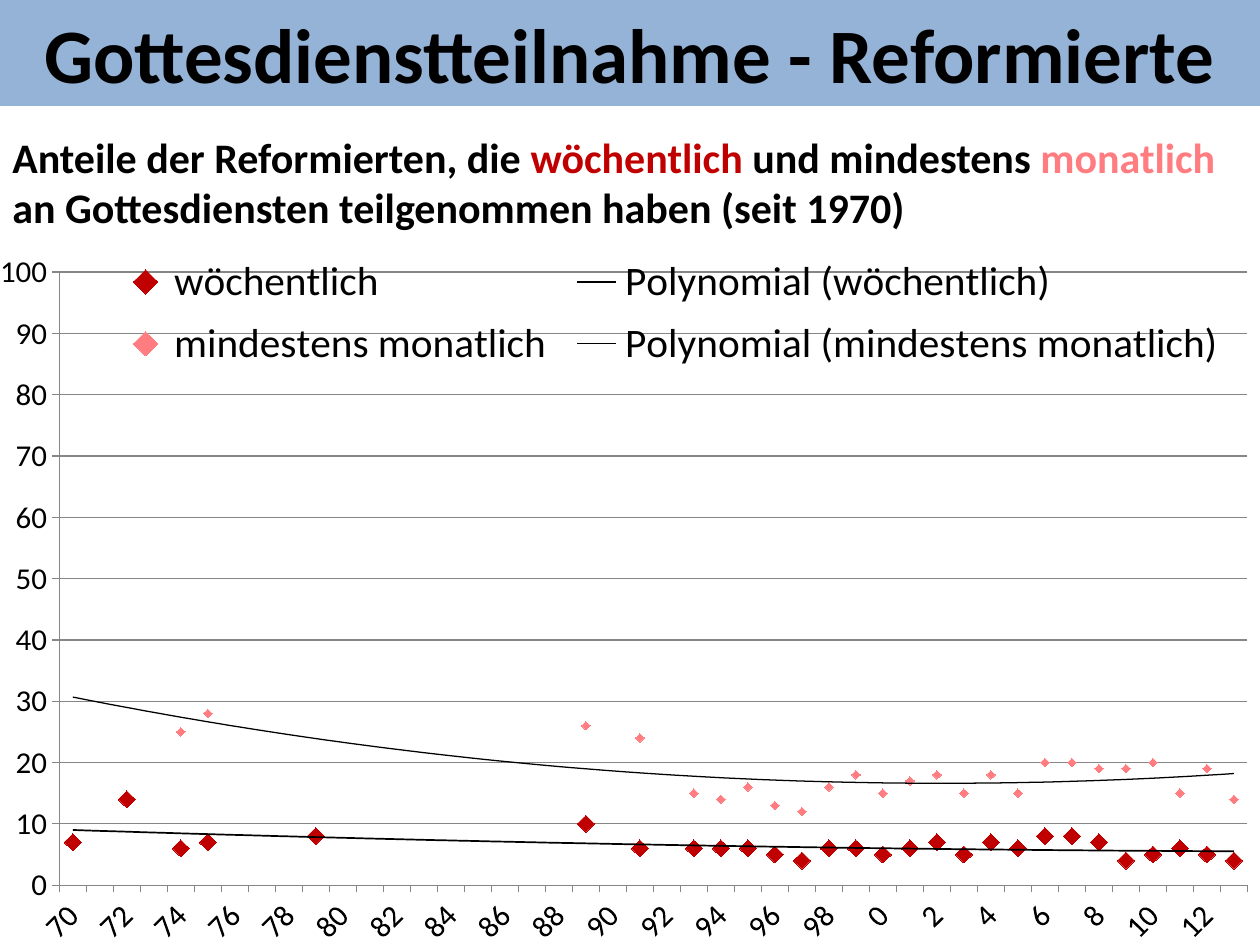
from lxml import etree
from pptx import Presentation
from pptx.chart.data import CategoryChartData
from pptx.dml.color import RGBColor
from pptx.enum.chart import XL_CHART_TYPE, XL_LEGEND_POSITION, XL_MARKER_STYLE, XL_TICK_MARK
from pptx.enum.text import MSO_ANCHOR, MSO_AUTO_SIZE, PP_ALIGN
from pptx.oxml import parse_xml
from pptx.oxml.ns import nsdecls, qn
from pptx.util import Pt

LINE_MARKERS = XL_CHART_TYPE.LINE_MARKERS
DIAMOND = XL_MARKER_STYLE.DIAMOND
RIGHT = XL_LEGEND_POSITION.RIGHT
OUTSIDE, NO_TICK = XL_TICK_MARK.OUTSIDE, XL_TICK_MARK.NONE
MIDDLE, CENTER, NO_AUTOFIT = MSO_ANCHOR.MIDDLE, PP_ALIGN.CENTER, MSO_AUTO_SIZE.NONE

# Content
FONT = "Calibri"
COLORS = {"band": "95B3D7", "text": "000000", "weekly": "C00000",
          "monthly": "FF7C80", "grid": "868686"}
TITLE = "Gottesdienstteilnahme - Reformierte"
SUBTITLE = [
    ("Anteile der Reformierten, die ", "text"),
    ("wöchentlich ", "weekly"),
    ("und mindestens ", "text"),
    ("monatlich ", "monthly"),
    ("an Gottesdiensten teilgenommen haben (seit 1970)", "text"),
]
FIRST_YEAR, LAST_YEAR = 1970, 2013
SERIES = [
    {"name": "wöchentlich", "color": "weekly", "marker": 10, "trend": 1,
     "early": {1970: 7, 1972: 14, 1974: 6, 1975: 7, 1979: 8, 1989: 10, 1991: 6},
     "since_1993": [6, 6, 6, 5, 4, 6, 6, 5, 6, 7, 5, 7, 6, 8, 8, 7, 4, 5, 6, 5, 4]},
    {"name": "mindestens monatlich", "color": "monthly", "marker": 5, "trend": 0.75,
     "early": {1974: 25, 1975: 28, 1989: 26, 1991: 24},
     "since_1993": [15, 14, 16, 13, 12, 16, 18, 15, 17, 18, 15, 18, 15, 20, 20,
                    19, 19, 20, 15, 19, 14]},
]
WIDTH, HEIGHT = 720, 540
BOXES = {"title": (0, 0, WIDTH, 60.5), "chart": (0, 136, WIDTH, 404),
         "subtitle": (0, 71.5, WIDTH, 65.5)}
PLOT_LAYOUT = {"layoutTarget": "inner", "xMode": "edge", "yMode": "edge",
               "x": 0.03, "y": 0.05, "w": 0.96, "h": 0.9}
LEGEND_LAYOUT = {"xMode": "edge", "yMode": "edge",
                 "x": 0.07, "y": 0.01, "w": 0.91, "h": 0.2}


def rgb(name):
    return RGBColor.from_string(COLORS[name])


def box(name):
    return [Pt(length) for length in BOXES[name]]


def set_font(font, size, color="text", bold=False):
    for key, value in {"name": FONT, "size": Pt(size), "bold": bold}.items():
        setattr(font, key, value)
    font.color.rgb = rgb(color)


def set_layout(parent, values, before):
    """Place a chart part by fractions of the chart area."""
    for old in parent.findall(qn("c:layout")):
        parent.remove(old)
    layout = parse_xml(f"<c:layout {nsdecls('c')}><c:manualLayout/></c:layout>")
    for key, value in values.items():
        etree.SubElement(layout[0], qn(f"c:{key}")).set("val", str(value))
    parent.find(qn(before)).addprevious(layout)


def add_trend(series, width):
    trend = parse_xml(
        f"<c:trendline {nsdecls('c', 'a')}><c:spPr><a:ln w=\"{Pt(width)}\"><a:solidFill>"
        f"<a:srgbClr val=\"{COLORS['text']}\"/></a:solidFill></a:ln></c:spPr>"
        "<c:trendlineType val=\"poly\"/><c:order val=\"2\"/>"
        "<c:dispRSqr val=\"0\"/><c:dispEq val=\"0\"/></c:trendline>")
    series._element.find(qn("c:cat")).addprevious(trend)


prs = Presentation()
prs.slide_width, prs.slide_height = Pt(WIDTH), Pt(HEIGHT)
slide = prs.slides.add_slide(prs.slide_layouts[5])

# Title band
title = slide.shapes.title
title.left, title.top, title.width, title.height = box("title")
title.fill.solid()
title.fill.fore_color.rgb = rgb("band")
title.text_frame.text = TITLE
for key, value in {"auto_size": NO_AUTOFIT, "vertical_anchor": MIDDLE,
                   "word_wrap": True}.items():
    setattr(title.text_frame, key, value)
heading = title.text_frame.paragraphs[0]
heading.alignment = CENTER
set_font(heading.runs[0].font, 44, bold=True)

# Attendance chart
years = range(FIRST_YEAR, LAST_YEAR + 1)
data = CategoryChartData(number_format="0")
data.categories = [str(year % 100) for year in years]
for entry in SERIES:
    shares = {**entry["early"], **dict(enumerate(entry["since_1993"], 1993))}
    data.add_series(entry["name"], [shares.get(year) for year in years])
chart = slide.shapes.add_chart(LINE_MARKERS, *box("chart"), data).chart
chart.has_title = False
set_font(chart.font, 10)
chart.plots[0].vary_by_categories = False
set_layout(chart._chartSpace.chart.plotArea, PLOT_LAYOUT, "c:lineChart")

for series, entry in zip(chart.plots[0].series, SERIES):
    series.smooth = False
    series.format.line.fill.background()
    series.marker.style, series.marker.size = DIAMOND, entry["marker"]
    marker_format = series.marker.format
    marker_format.fill.solid()
    marker_format.fill.fore_color.rgb = rgb(entry["color"])
    marker_format.line.color.rgb = rgb(entry["color"])
    add_trend(series, entry["trend"])

# Axes: every second year labelled, slanted
year_axis, share_axis = chart.category_axis, chart.value_axis
for key, value in {"minimum_scale": 0, "maximum_scale": 100, "major_unit": 10,
                   "has_major_gridlines": True}.items():
    setattr(share_axis, key, value)
year_axis.has_major_gridlines = False
for axis in (year_axis, share_axis):
    axis.major_tick_mark, axis.minor_tick_mark = OUTSIDE, NO_TICK
    set_font(axis.tick_labels.font, 18)
    axis.format.line.color.rgb = rgb("grid")
share_axis.major_gridlines.format.line.color.rgb = rgb("grid")
share_axis.tick_labels.number_format = "0"
share_axis.tick_labels.number_format_is_linked = False
year_axis._element.find(qn("c:txPr")).find(qn("a:bodyPr")).set("rot", "-2700000")
label_skip = parse_xml(f"<c:tickLblSkip {nsdecls('c')} val=\"2\"/>")
year_axis._element.find(qn("c:noMultiLvlLbl")).addprevious(label_skip)

# Legend inside the plot
chart.has_legend = True
legend = chart.legend
legend.position, legend.include_in_layout = RIGHT, False
set_font(legend.font, 24)
set_layout(legend._element, LEGEND_LAYOUT, "c:overlay")

# Subtitle
subtitle = slide.shapes.add_textbox(*box("subtitle")).text_frame
subtitle.word_wrap = True
for text, color in SUBTITLE:
    run = subtitle.paragraphs[0].add_run()
    run.text = text
    set_font(run.font, 24, color, bold=True)

prs.save("out.pptx")
